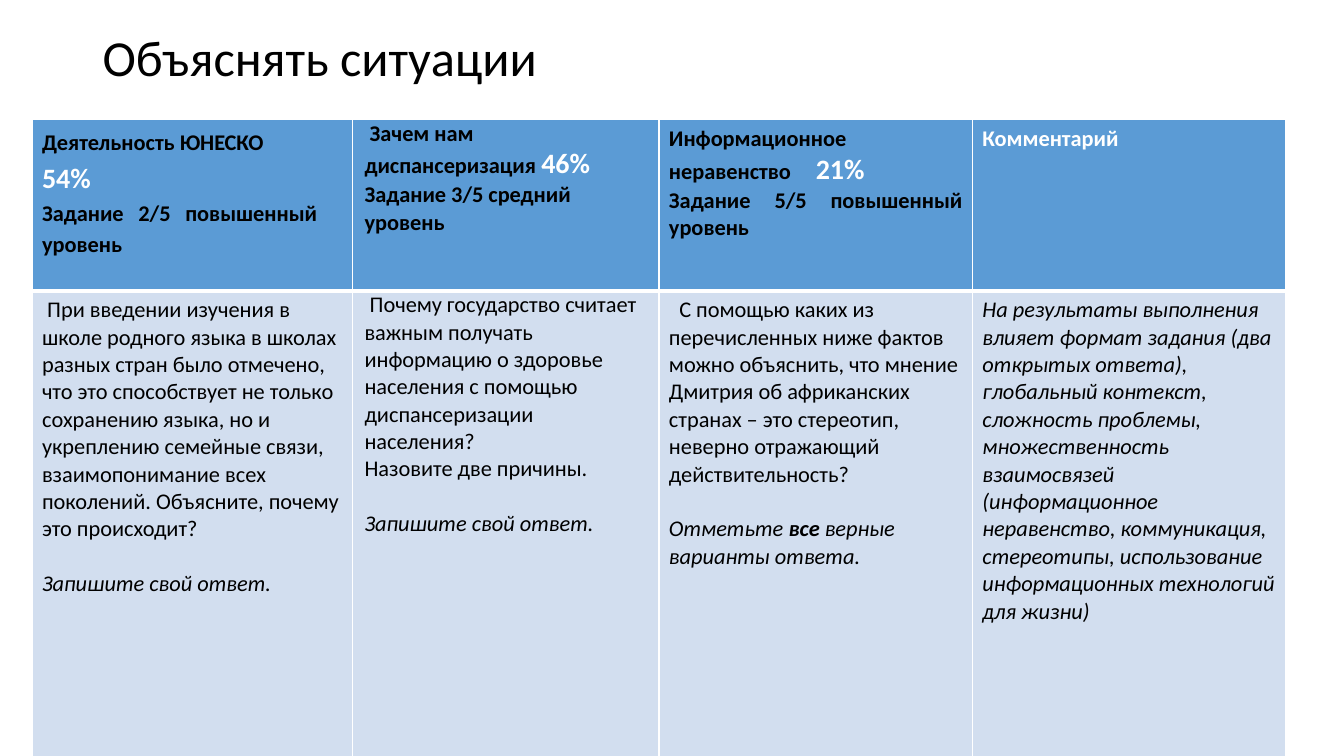
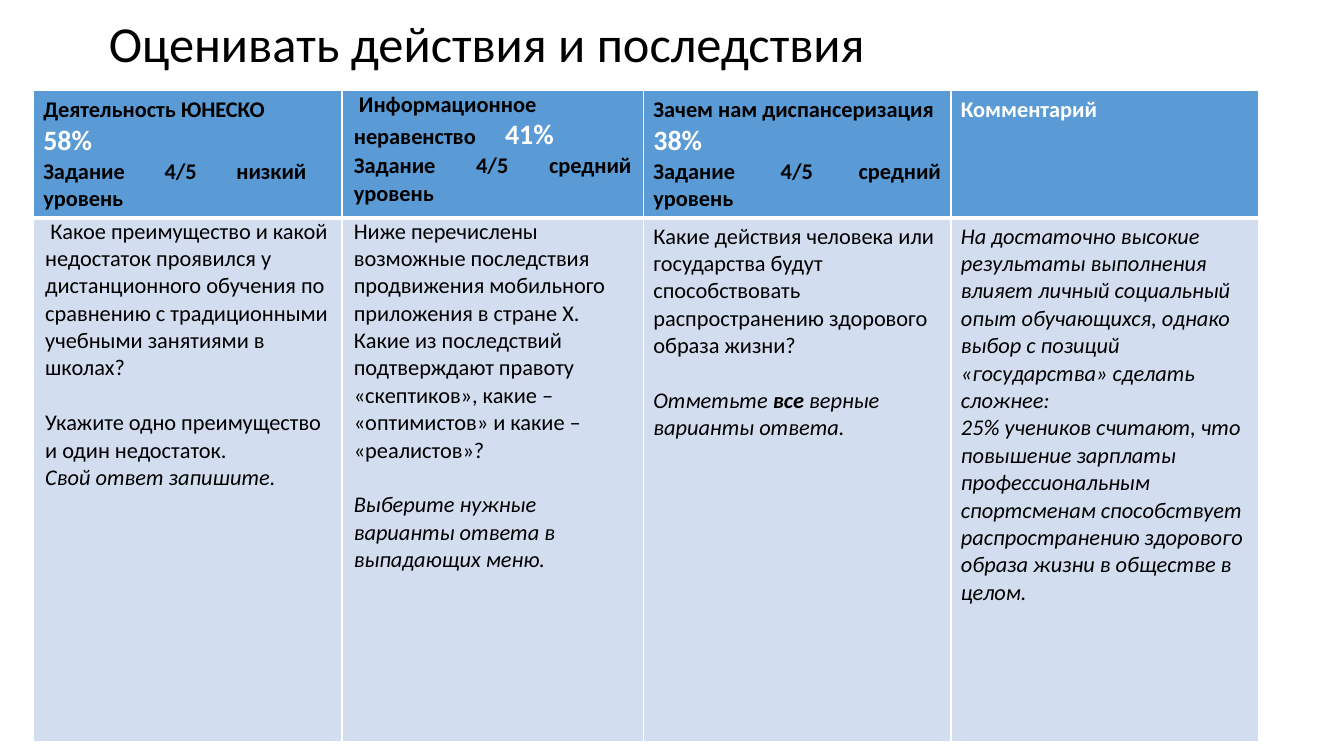
from dataclasses import dataclass
from lxml.etree import SubElement
from pptx import Presentation
from pptx.dml.color import RGBColor as Rgb
from pptx.enum.text import MSO_ANCHOR as Anchor, MSO_AUTO_SIZE as Fit, PP_ALIGN as Align
from pptx.oxml.ns import qn
from pptx.util import Cm, Pt

INK = {"black": "000000", "white": "FFFFFF", "head": "5B9BD5", "body": "D2DEEF"}
FONT = "Calibri"
STYLE = {
    "title": (36, "black", False, False),
    "head": (16, "black", True, False),
    "note": (16, "white", True, False),
    "rate": (20, "white", True, False),
    "text": (16, "black", False, False),
    "slant": (16, "black", False, True),
    "stress": (16, "black", True, True),
}
LINE = 19.5
NUDGE = 0.13
TAB = 3.7


@dataclass
class Para:
    runs: list
    just: bool = False
    dent: float = 0
    gap: float = 0
    lead: float = 1
    tab: float = 0


@dataclass
class Box:
    paras: list
    tight: bool = False
    right: float = 0.25


def tint(name):
    return Rgb.from_string(INK[name])


def para(text, style="text", **more):
    return Para([(text, style)], **more)


def head(name, rate, task, just=True, **more):
    lead = more.get("lead", 1)
    return [Para([(name, "head"), (rate, "rate")], **more),
            para(task, "head", just=just, lead=lead)]


def choose():
    return Para([("Отметьте ", "slant"), ("все", "stress"),
                 (" верные варианты ответа.", "slant")], gap=LINE)


def write(frame, paras):
    for pos, item in enumerate(paras):
        par = frame.paragraphs[0] if pos == 0 else frame.add_paragraph()
        par.alignment = Align.JUSTIFY if item.just else Align.LEFT
        par.line_spacing = item.lead
        par.space_before = Pt(item.gap)
        props = par._p.get_or_add_pPr()
        if item.dent:
            props.set("indent", str(Cm(item.dent)))
        if item.tab:
            stops = SubElement(props, qn("a:tabLst"))
            SubElement(stops, qn("a:tab"), pos=str(Cm(item.tab)), algn="l")
        for text, style in item.runs:
            size, ink, bold, slant = STYLE[style]
            run = par.add_run()
            run.text = text
            font = run.font
            font.name, font.size = FONT, Pt(size)
            font.bold, font.italic = bold, slant
            font.color.rgb = tint(ink)


def edge(cell, sides):
    props = cell._tc.get_or_add_tcPr()
    for side, width in sides:
        line = SubElement(props, qn("a:ln" + side), w=str(Pt(width)))
        fill = SubElement(line, qn("a:solidFill"))
        SubElement(fill, qn("a:srgbClr"), val=INK["white"])


def fill(cell, data, top):
    sides = [("L", 1), ("R", 1)]
    edge(cell, sides + ([("T", 1), ("B", 3)] if top else [("T", 3), ("B", 1)]))
    cell.fill.solid()
    cell.fill.fore_color.rgb = tint("head" if top else "body")
    if data.tight:
        cell.margin_left = cell.margin_right = Cm(0.3)
        cell.margin_top = cell.margin_bottom = 0
    else:
        cell.margin_left, cell.margin_right = Cm(0.25), Cm(data.right)
        cell.margin_top = cell.margin_bottom = Cm(0.13)
    cell.vertical_anchor = Anchor.TOP
    write(cell.text_frame, data.paras)


def title(slide, box, text):
    shape = slide.shapes.title
    shape.left, shape.top, shape.width, shape.height = map(Cm, box)
    frame = shape.text_frame
    frame.word_wrap = True
    frame.auto_size = Fit.NONE
    frame.vertical_anchor = Anchor.TOP
    write(frame, [para(text, "title", lead=0.9)])


def grid(slide, box, cols, high, rows):
    x, y, wide, tall = box
    table = slide.shapes.add_table(
        len(rows), len(cols), Cm(x), Cm(y), Cm(wide), Cm(tall)).table
    table.horz_banding = False
    for col, share in zip(table.columns, cols):
        col.width = Cm(wide * share / sum(cols))
    for row, size in zip(table.rows, (high, tall - high)):
        row.height = Cm(size)
    for r, row in enumerate(rows):
        for c, data in enumerate(row):
            fill(table.cell(r, c), data, r == 0)


def page(deck, name, spot, box, cols, high, rows):
    slide = deck.slides.add_slide(deck.slide_layouts[5])
    title(slide, (*spot, 29.21, 3.68), name)
    grid(slide, box, cols, high, rows)


NOTE = Box([para("Комментарий", "note")])

CAUSES = [
    [
        Box(head("Деятельность ЮНЕСКО ", "54%", "Задание 2/5 повышенный уровень",
                 just=True, lead=1.15), right=0.89),
        Box(head("Зачем нам диспансеризация ", "46%", "Задание 3/5 средний уровень",
                 just=False, dent=NUDGE), tight=True),
        Box(head("Информационное неравенство\t", "21%",
                 "Задание 5/5 повышенный уровень", tab=TAB)),
        NOTE,
    ],
    [
        Box([para("При введении изучения в школе родного языка в школах разных стран "
                  "было отмечено, что это способствует не только сохранению языка, но и "
                  "укреплению семейные связи, взаимопонимание всех поколений. "
                  "Объясните, почему это происходит?", dent=NUDGE),
             para("Запишите свой ответ.", "slant", gap=LINE)]),
        Box([para("Почему государство считает важным получать информацию о здоровье "
                  "населения с помощью диспансеризации населения?", dent=NUDGE),
             para("Назовите две причины."),
             para("Запишите свой ответ.", "slant", gap=LINE)], tight=True),
        Box([para("С помощью каких из перечисленных ниже фактов можно объяснить, что "
                  "мнение Дмитрия об африканских странах – это стереотип, неверно "
                  "отражающий действительность?", dent=2 * NUDGE),
             choose()]),
        Box([para("На результаты выполнения влияет формат задания (два открытых "
                  "ответа),", "slant"),
             para("глобальный контекст,", "slant"),
             para("сложность проблемы, множественность взаимосвязей (информационное "
                  "неравенство, коммуникация, стереотипы, использование "
                  "информационных технологий для жизни)", "slant")]),
    ],
]

EFFECTS = [
    [
        Box(head("Деятельность ЮНЕСКО ", "58%", "Задание 4/5 низкий уровень",
                 just=True), right=0.89),
        Box(head("Информационное неравенство\t", "41%", "Задание 4/5 средний уровень",
                 dent=NUDGE, tab=TAB), tight=True),
        Box([para("Зачем нам диспансеризация", "head"),
             para("38%", "rate", just=True),
             para("Задание 4/5 средний уровень", "head", just=True)]),
        NOTE,
    ],
    [
        Box([para("Какое преимущество и какой недостаток проявился у дистанционного "
                  "обучения по сравнению с традиционными учебными занятиями в школах?",
                  dent=NUDGE),
             para("Укажите одно преимущество и один недостаток.", gap=LINE),
             para("Свой ответ запишите.", "slant")], tight=True),
        Box([para("Ниже перечислены возможные последствия продвижения мобильного "
                  "приложения в стране X."),
             para("Какие из последствий подтверждают правоту «скептиков», какие – "
                  "«оптимистов» и какие – «реалистов»?"),
             para("Выберите нужные варианты ответа в выпадающих меню.", "slant",
                  gap=LINE)], tight=True),
        Box([para("Какие действия человека или государства будут способствовать "
                  "распространению здорового образа жизни?"),
             choose()]),
        Box([para("На достаточно высокие результаты выполнения влияет личный "
                  "социальный опыт обучающихся, однако выбор с позиций «государства» "
                  "сделать сложнее:", "slant"),
             para("25% учеников считают, что повышение зарплаты профессиональным "
                  "спортсменам способствует распространению здорового образа жизни в "
                  "обществе в целом.", "slant")]),
    ],
]


def main():
    deck = Presentation()
    deck.slide_width, deck.slide_height = Cm(33.87), Cm(19.05)
    page(deck, "Объяснять ситуации", (2.33, 0.7),
         (0.81, 3.02, 31.6, 16.05), (3.18, 3.04, 3.11, 3.11), 4.32, CAUSES)
    page(deck, "Оценивать действия и последствия", (2.49, 0.36),
         (0.84, 2.29, 30.88, 16.38), (3.06, 2.99, 3.05, 3.05), 3.17, EFFECTS)
    deck.save("out.pptx")


if __name__ == "__main__":
    main()
